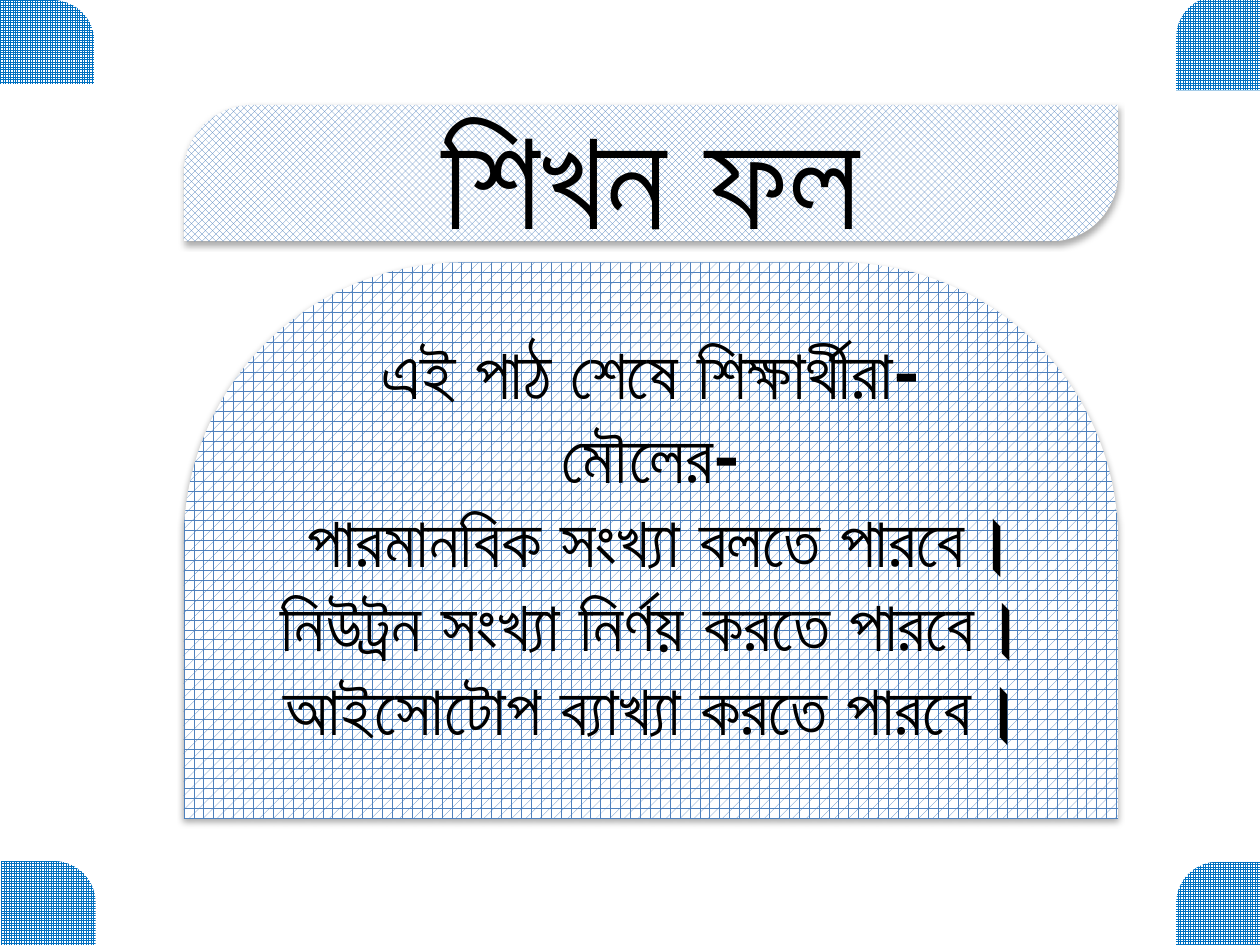
from pptx import Presentation
from pptx.dml.color import RGBColor
from pptx.enum.dml import MSO_PATTERN
from pptx.enum.shapes import MSO_SHAPE
from pptx.enum.text import MSO_ANCHOR, PP_ALIGN
from pptx.oxml import parse_xml
from pptx.oxml.ns import nsdecls, qn
from pptx.util import Pt

FONT = "Roboto"
PANEL_BLUE, CORNER_BLUE = "4F81BD", "0070C0"
WHITE, BLACK = "FFFFFF", "000000"


def color(value):
    return RGBColor.from_string(value)


def add_patterned_shape(slide, kind, box, pattern, foreground, adjustments):
    shape = slide.shapes.add_shape(kind, *(Pt(length) for length in box))
    for index, value in enumerate(adjustments):
        shape.adjustments[index] = value
    shape.shadow.inherit = False
    shape.line.fill.background()
    shape.fill.patterned()
    shape.fill.pattern = pattern
    shape.fill.fore_color.rgb = color(foreground)
    shape.fill.back_color.rgb = color(WHITE)
    return shape


def add_soft_shadow(shape):
    effects = shape._element.spPr.find(qn("a:effectLst"))
    effects.append(parse_xml(
        f'<a:outerShdw {nsdecls("a")} blurRad="{Pt(3.5)}" dist="{Pt(2.2)}" '
        f'dir="5400000" rotWithShape="0"><a:srgbClr val="{BLACK}">'
        '<a:alpha val="32000"/></a:srgbClr></a:outerShdw>'))


def write_text(shape, lines, size, bold=True, font_color=BLACK, bottom=3.6,
               indents=None):
    frame = shape.text_frame
    frame.word_wrap = True
    frame.vertical_anchor = MSO_ANCHOR.MIDDLE
    frame.margin_bottom = Pt(bottom)
    for index, line in enumerate(lines):
        paragraph = frame.paragraphs[0] if index == 0 else frame.add_paragraph()
        paragraph.alignment = PP_ALIGN.CENTER
        if indents and index in indents:
            properties = paragraph._p.get_or_add_pPr()
            properties.set("marL", str(Pt(indents[index])))
        run = paragraph.add_run()
        run.text = line
        run.font.name = FONT
        run.font.size = Pt(size)
        run.font.bold = bold
        run.font.color.rgb = color(font_color)


def add_title(slide, left, top, width, height):
    banner = add_patterned_shape(
        slide, MSO_SHAPE.ROUND_2_DIAG_RECTANGLE, (left, top, width, height),
        MSO_PATTERN.LARGE_CHECKER_BOARD, PANEL_BLUE, (0.5, 0))
    add_soft_shadow(banner)
    write_text(banner, ["শিখন ফল"], size=80)


def add_outcomes(slide, left, top, width, height):
    panel = add_patterned_shape(
        slide, MSO_SHAPE.ROUND_2_SAME_RECTANGLE, (left, top, width, height),
        MSO_PATTERN.PLAID, PANEL_BLUE, (0.5, 0))
    add_soft_shadow(panel)
    write_text(panel, [
        "এই পাঠ শেষে শিক্ষার্থীরা-",
        "মৌলের-",
        "পারমানবিক সংখ্যা বলতে পারবে।",
        "নিউট্রন সংখ্যা নির্ণয় করতে পারবে।",
        "আইসোটোপ ব্যাখ্যা করতে পারবে।",
    ], size=40, bottom=51.6, indents={2: 10})


def add_corners(slide, left, top, width, height):
    tile_width, tile_height = 54, 48
    right = left + width - 51
    bottom = top + height - tile_height
    for x, y, rotation in (
        (right, top + 0.7, 270),
        (left, top, 0),
        (left + 0.7, bottom, 0),
        (right, bottom + 3.4, 270),
    ):
        corner = add_patterned_shape(
            slide, MSO_SHAPE.ROUND_1_RECTANGLE, (x, y, tile_width, tile_height),
            MSO_PATTERN.SMALL_GRID, CORNER_BLUE, (0.5,))
        corner.rotation = rotation


def main():
    presentation = Presentation()
    presentation.slide_width, presentation.slide_height = Pt(720), Pt(540)
    slide = presentation.slides.add_slide(presentation.slide_layouts[6])

    # Heading and learning outcomes share one column
    left, width = 105, 534
    add_title(slide, left, 60, width, 78)
    add_outcomes(slide, left, 150, width, 318)

    # Decorated slide corners
    add_corners(slide, 0, 0, 720, 540)
    presentation.save("out.pptx")


if __name__ == "__main__":
    main()
